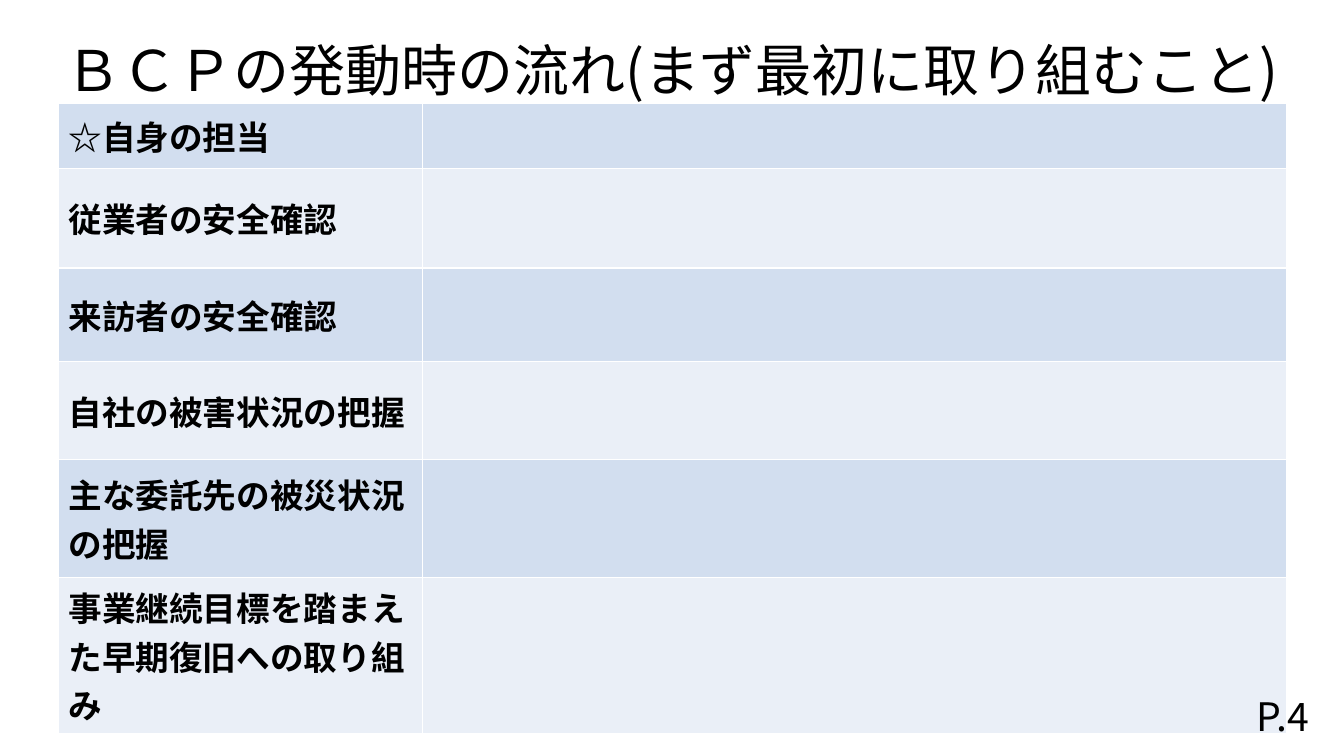
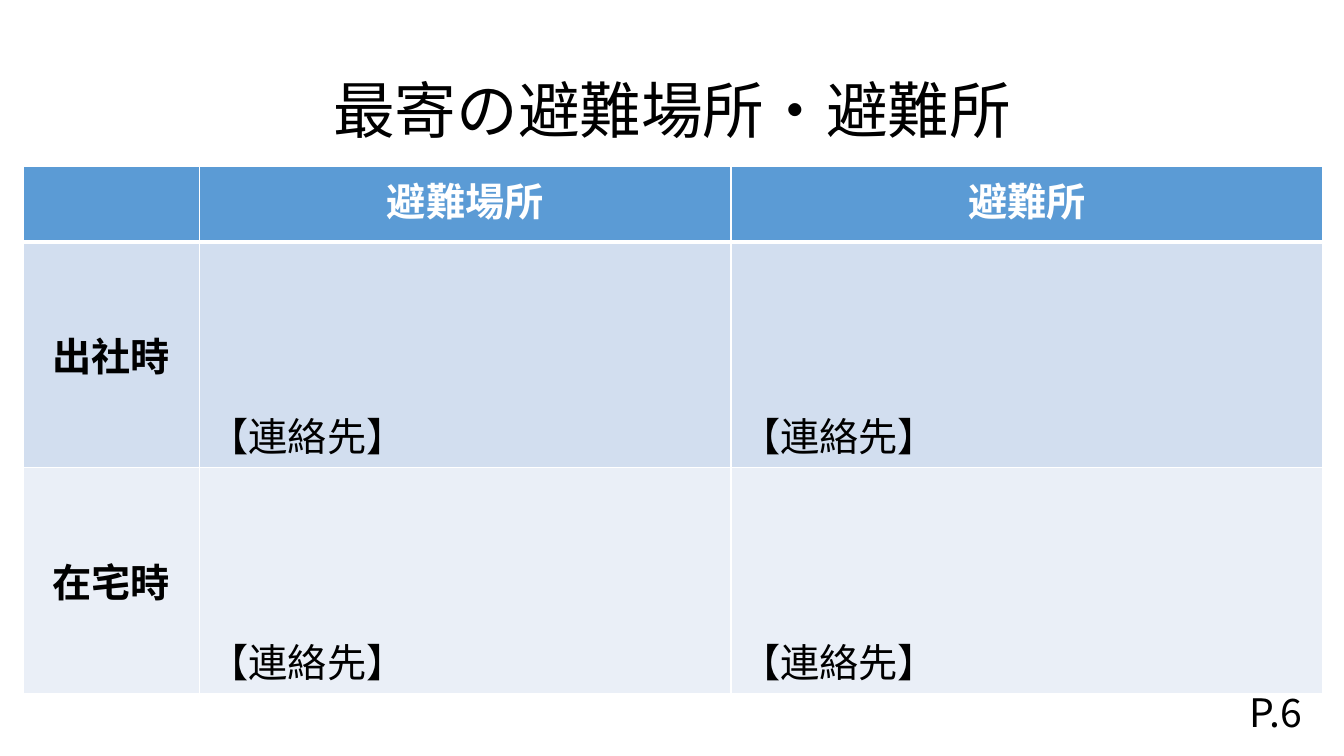
from lxml.etree import SubElement
from pptx import Presentation
from pptx.dml.color import RGBColor
from pptx.enum.text import MSO_ANCHOR as Anchor, PP_ALIGN as Align
from pptx.oxml.ns import qn
from pptx.util import Inches, Pt

FONT = "Noto Sans CJK JP"
BLACK, WHITE, BLUE = "000000", "FFFFFF", "5B9BD5"
BANDS = ["D2DEEF", "EAEFF7"]


def color(code):
    return RGBColor.from_string(code)


def style(para, size, align=Align.LEFT, bold=False, ink=BLACK):
    para.alignment = align
    font = para.font
    font.name, font.size, font.bold = FONT, Pt(size), bold
    font.color.rgb = color(ink)
    props = para._p.pPr.find(qn("a:defRPr"))
    SubElement(props, qn("a:ea"), typeface=FONT)


duties = [
    "☆自身の担当",
    "従業者の安全確認",
    "来訪者の安全確認",
    "自社の被害状況の把握",
    "主な委託先の被災状況の把握",
    "事業継続目標を踏まえた早期復旧への取り組み",
]
contact = "【連絡先】"
pages = [
    {
        "title": "ＢＣＰの発動時の流れ(まず最初に取り組むこと)",
        "box": (0, 0, 13.33, 1.45), "size": 40,
        "spot": (0.58, 1.03), "cols": [3.61, 8.57],
        "rows": [0.64, 0.99, 0.93, 0.97, 1.17, 1.17],
        "cells": [[duty, ""] for duty in duties],
        "head": False, "text": 24, "align": Align.LEFT,
        "page": "P.4", "foot": (10.08, 6.9),
    },
    {
        "title": "最寄の避難場所・避難所",
        "box": (0.92, 0.4, 11.5, 1.45), "size": 44,
        "spot": (0.23, 1.65), "cols": [1.75, 5.27, 5.87],
        "rows": [0.75, 2.24, 2.24],
        "cells": [
            ["", "避難場所", "避難所"],
            ["出社時", contact, contact],
            ["在宅時", contact, contact],
        ],
        "head": True, "text": 28, "align": Align.CENTER,
        "page": "P.6", "foot": (10.01, 6.86),
    },
]

deck = Presentation()
deck.slide_width, deck.slide_height = Inches(13.33), Inches(7.5)

for page in pages:
    slide = deck.slides.add_slide(deck.slide_layouts[5])

    title = slide.shapes.title
    title.left, title.top, title.width, title.height = map(Inches, page["box"])
    frame = title.text_frame
    frame.text = page["title"]
    frame.vertical_anchor = Anchor.MIDDLE
    frame.paragraphs[0].line_spacing = 0.9
    style(frame.paragraphs[0], page["size"], Align.CENTER)

    cols, rows, head = page["cols"], page["rows"], page["head"]
    area = map(Inches, (*page["spot"], sum(cols), sum(rows)))
    table = slide.shapes.add_table(len(rows), len(cols), *area).table
    table.first_row = head
    for col, width in zip(table.columns, cols):
        col.width = Inches(width)
    for row, height in zip(table.rows, rows):
        row.height = Inches(height)

    for r, line in enumerate(page["cells"]):
        top = head and r == 0
        for c, text in enumerate(line):
            cell = table.cell(r, c)
            props = cell._tc.get_or_add_tcPr()
            for side in "LRTB":
                thick = head and (r, side) in [(0, "B"), (1, "T")]
                edge = SubElement(props, qn(f"a:ln{side}"), w=str(Pt(3 if thick else 1)))
                fill = SubElement(edge, qn("a:solidFill"))
                SubElement(fill, qn("a:srgbClr"), val=WHITE)
            cell.fill.solid()
            cell.fill.fore_color.rgb = color(BLUE if top else BANDS[(r - head) % 2])
            if not text:
                continue
            cell.text = text
            label = top or c == 0
            if top:
                cell.vertical_anchor = Anchor.TOP
            else:
                cell.vertical_anchor = Anchor.MIDDLE if label else Anchor.BOTTOM
            style(cell.text_frame.paragraphs[0], page["text"],
                  page["align"] if label else Align.LEFT, label, WHITE if top else BLACK)

    foot = slide.shapes.add_textbox(*map(Inches, (*page["foot"], 3, 0.4)))
    frame = foot.text_frame
    frame.word_wrap = True
    frame.vertical_anchor = Anchor.MIDDLE
    frame.text = page["page"]
    style(frame.paragraphs[0], 28, Align.RIGHT)

deck.save("out.pptx")
